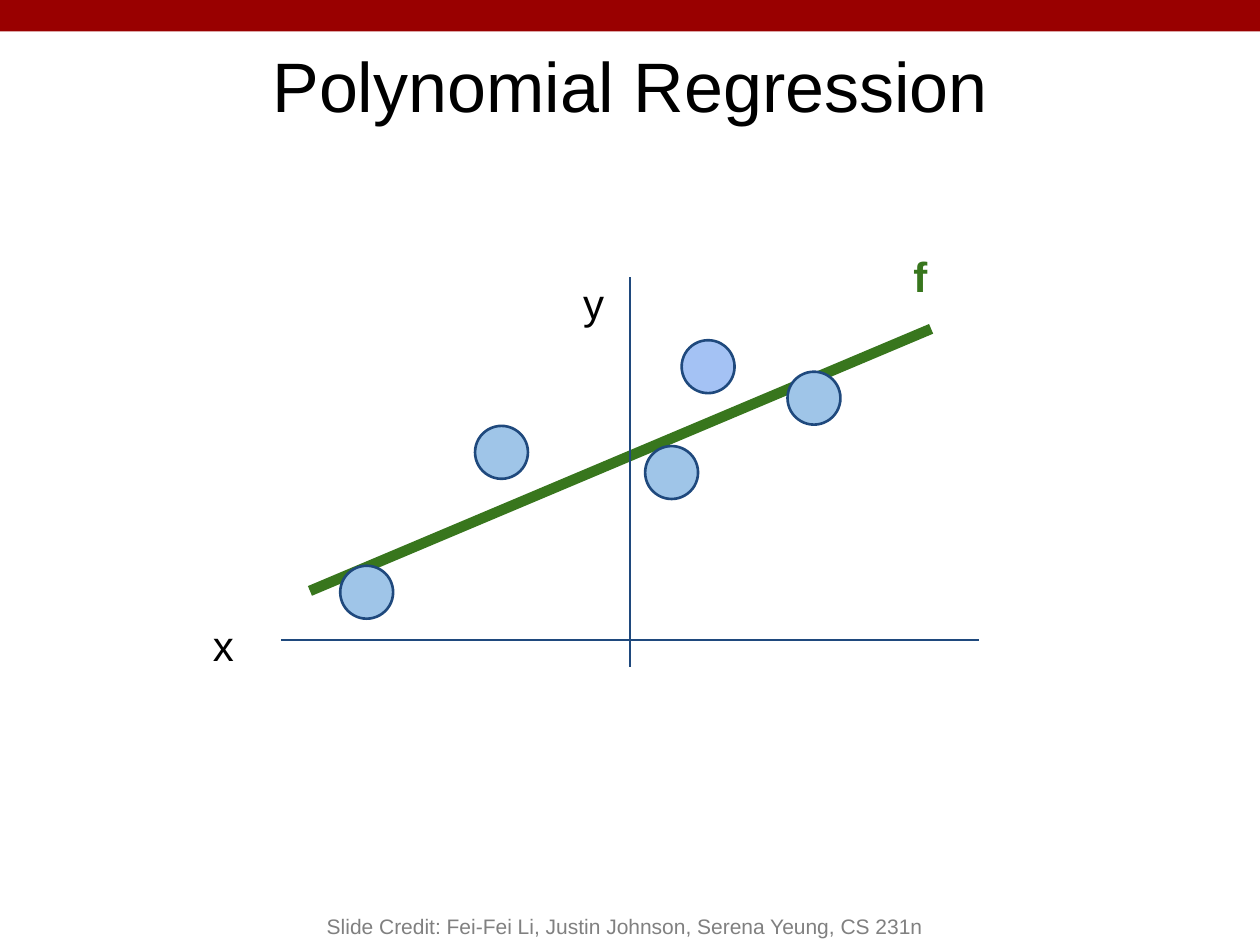
from typing import NamedTuple

from lxml.etree import SubElement
from pptx import Presentation
from pptx.dml.color import RGBColor
from pptx.enum.shapes import MSO_CONNECTOR as Link, MSO_SHAPE as Kind
from pptx.enum.text import MSO_ANCHOR as Anchor, PP_ALIGN as Align
from pptx.oxml.ns import qn
from pptx.util import Inches, Pt

WIDE, HIGH = Inches(10), Inches(7.5)
COLS, ROWS = 100, 75  # grid over the whole slide
DOT = 4.2
FONT = "Arial"
HUES = {
    "band": "990000", "ink": "000000", "axis": "1F497D", "fit": "38761D",
    "dot": "9FC5E8", "odd": "A4C2F4", "note": "808080",
}


class Line(NamedTuple):
    x1: float
    y1: float
    x2: float
    y2: float
    hue: str = "axis"
    width: float = 1.5


class Dot(NamedTuple):
    x: float
    y: float
    hue: str = "dot"


class Label(NamedTuple):
    text: str
    x: float
    y: float
    w: float = 5.2
    h: float = 5.3
    hue: str = "ink"
    size: float = 24
    bold: bool = False
    align: Align = Align.LEFT
    anchor: Anchor = Anchor.TOP
    pad: float = 0.1


FIT = Line(24.6, 46.9, 73.9, 26.1, "fit", 6)
AXES = [Line(22.3, 50.8, 77.7, 50.8), Line(50, 22, 50, 52.9)]
DOTS = [Dot(27, 44.9), Dot(37.7, 33.8), Dot(62.5, 29.5), Dot(51.2, 35.4),
        Dot(54.1, 27, "odd")]
TITLE = Label("Polynomial Regression", 0, 2.5, COLS, 8.4, size=40,
              align=Align.CENTER, anchor=Anchor.MIDDLE)
LABELS = [
    Label("x", 15.9, 48.2),
    Label("y", 45.3, 21),
    Label("f", 71.5, 18.9, h=6.3, hue="fit", bold=True),
    Label("Slide Credit: Fei-Fei Li, Justin Johnson, Serena Yeung, CS 231n",
          20, 70, 59.2, 5, "note", 12, align=Align.CENTER,
          anchor=Anchor.BOTTOM, pad=0.05),
]


def col(n: float) -> int:
    return round(WIDE * n / COLS)


def row(n: float) -> int:
    return round(HIGH * n / ROWS)


def paint(name: str) -> RGBColor:
    return RGBColor.from_string(HUES[name])


def draw_line(slide, line: Line) -> None:
    link = slide.shapes.add_connector(
        Link.STRAIGHT, col(line.x1), row(line.y1), col(line.x2), row(line.y2))
    link.line.color.rgb = paint(line.hue)
    link.line.width = Pt(line.width)
    SubElement(link._element.spPr, qn("a:effectLst"))


def draw_shape(slide, kind: Kind, x: float, y: float, w: float, h: float,
               hue: str, edge: str = "") -> None:
    shape = slide.shapes.add_shape(kind, col(x), row(y), col(w), row(h))
    shape.shadow.inherit = False
    shape.fill.solid()
    shape.fill.fore_color.rgb = paint(hue)
    if edge:
        shape.line.color.rgb = paint(edge)
        shape.line.width = Pt(1.5)
    else:
        shape.line.fill.background()


def fill_text(shape, label: Label) -> None:
    """Place a box or placeholder and write its label as one run."""
    shape.left, shape.top = col(label.x), row(label.y)
    shape.width, shape.height = col(label.w), row(label.h)
    frame = shape.text_frame
    frame.word_wrap = True
    frame.vertical_anchor = label.anchor
    frame.margin_left = frame.margin_right = Inches(0.1)
    frame.margin_top = frame.margin_bottom = Inches(label.pad)
    para = frame.paragraphs[0]
    para.alignment = label.align
    run = para.add_run()
    run.text = label.text
    run.font.name = FONT
    run.font.size = Pt(label.size)
    run.font.bold = label.bold
    run.font.color.rgb = paint(label.hue)


def main() -> None:
    deck = Presentation()
    deck.slide_width, deck.slide_height = WIDE, HIGH
    slide = deck.slides.add_slide(deck.slide_layouts.get_by_name("Title Only"))
    draw_shape(slide, Kind.RECTANGLE, 0, 0, COLS, 2.5, "band")
    fill_text(slide.shapes.title, TITLE)
    for line in [FIT, *AXES]:
        draw_line(slide, line)
    for dot in DOTS:
        draw_shape(slide, Kind.FLOWCHART_CONNECTOR, dot.x, dot.y, DOT, DOT,
                   dot.hue, "axis")
    for label in LABELS:
        box = slide.shapes.add_textbox(0, 0, 0, 0)
        fill_text(box, label)
    deck.save("out.pptx")


if __name__ == "__main__":
    main()
